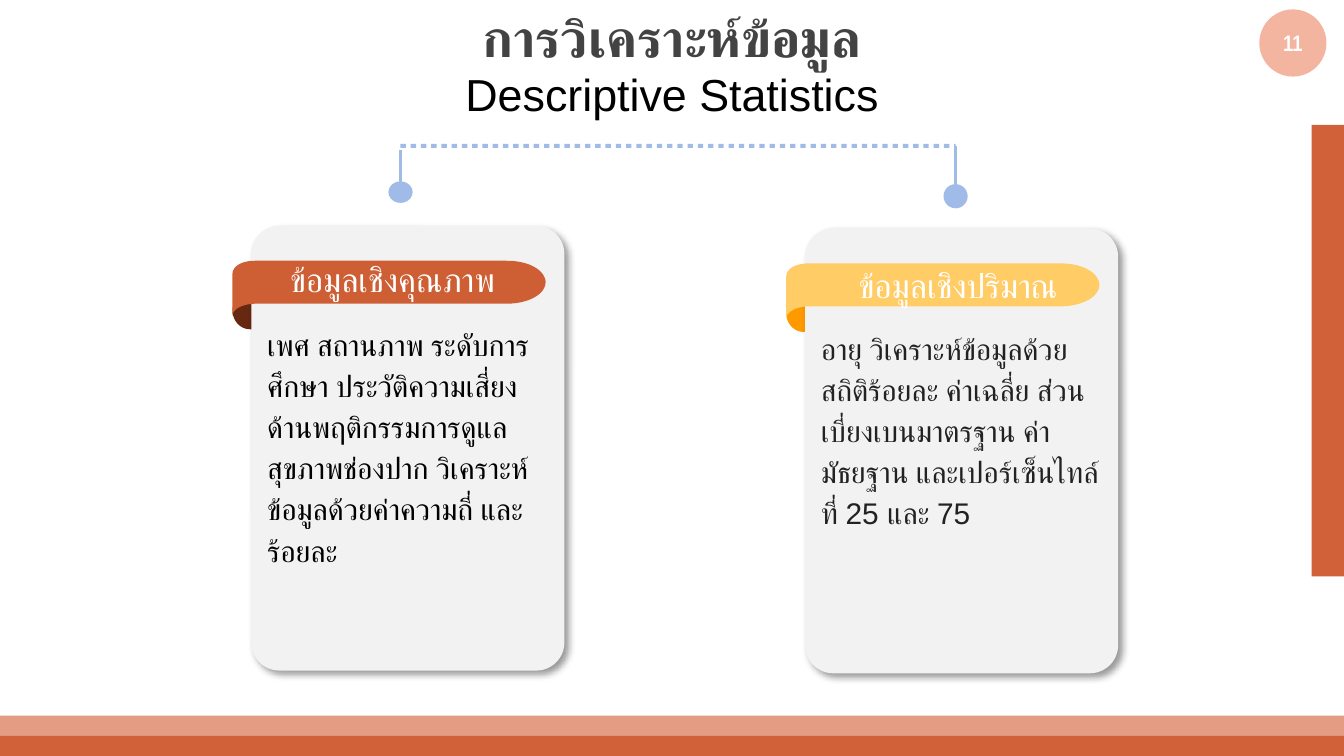
import pptx
import pptx.util
import pptx.dml.color
import pptx.enum.shapes
import pptx.enum.text
import pptx.oxml
import pptx.oxml.ns

Inches, Pt = pptx.util.Inches, pptx.util.Pt
RGB = pptx.dml.color.RGBColor
KIND = pptx.enum.shapes.MSO_SHAPE
LINE = pptx.enum.shapes.MSO_CONNECTOR.STRAIGHT
ALIGN = pptx.enum.text.PP_ALIGN
ANCHOR = pptx.enum.text.MSO_ANCHOR

RUST = RGB(0xD1, 0x61, 0x38)
BRICK = RGB(0xCE, 0x5E, 0x34)
BROWN = RGB(0x67, 0x28, 0x11)
YELLOW = RGB(0xFF, 0xCC, 0x66)
ORANGE = RGB(0xFF, 0x99, 0x00)
PEACH = RGB(0xF3, 0xB5, 0x9F)
BLUE = RGB(0xA1, 0xBB, 0xE8)
PALE = RGB(0xF2, 0xF2, 0xF2)
GREY = RGB(0x43, 0x43, 0x43)
INK = RGB(0x22, 0x22, 0x22)
BLACK = RGB(0, 0, 0)
WHITE = RGB(0xFF, 0xFF, 0xFF)

# Content: boxes are left, top, width, height in inches
TITLE = ("การวิเคราะห์ข้อมูล", (3.35, -0.02, 3.3, 0.63))
SUBTITLE = ("Descriptive Statistics", (2.5, 0.45, 5, 0.5))
PAGE = "11"
CARDS = [
    dict(left=1.73, top=1.68, band=BRICK, fold=BROWN,
         head="ข้อมูลเชิงคุณภาพ", head_box=(2.06, 1.88, 1.96, 0.4),
         body="เพศ สถานภาพ ระดับการศึกษา ประวัติความเสี่ยงด้านพฤติกรรมการดูแล"
              "สุขภาพช่องปาก วิเคราะห์ข้อมูลด้วยค่าความถี่ และร้อยละ",
         body_box=(1.89, 2.34, 2.33, 1.67), font="Cambria", ink=BLACK),
    dict(left=5.85, top=1.7, band=YELLOW, fold=ORANGE,
         head="ข้อมูลเชิงปริมาณ", head_box=(6.29, 1.92, 1.74, 0.4),
         body="อายุ วิเคราะห์ข้อมูลด้วยสถิติร้อยละ ค่าเฉลี่ย ส่วนเบี่ยงเบนมาตรฐาน "
              "ค่ามัธยฐาน และเปอร์เซ็นไทล์ที่ 25 และ 75",
         body_box=(6.01, 2.37, 2.31, 1.32), font="Arial", ink=INK),
]
# Stems: x, top, dot centre, dot height
STEMS = [(2.98, 1.12, 1.43, 0.16), (7.11, 1.09, 1.46, 0.18)]

# Outlines from a card's corner: 2 numbers are a line, 6 are a curve
FOLD = [(0.15, 0.49), (0.13, 0.49), (0.06, 0.49, 0, 0.56, 0, 0.63),
        (0, 0.71, 0.06, 0.77, 0.13, 0.77), (0.15, 0.77)]
BAND = [(2.32, 0.38), (2.29, 0.31, 2.18, 0.26, 2.04, 0.26), (0.17, 0.26),
        (0.07, 0.26, 0, 0.3, 0, 0.36), (0, 0.67),
        (0, 0.62, 0.08, 0.58, 0.17, 0.58), (2.04, 0.58),
        (2.2, 0.58, 2.33, 0.51, 2.33, 0.42), (2.33, 0.41, 2.33, 0.4, 2.32, 0.38)]

# Slide of 16 by 9
WIDE = 10
HIGH = WIDE * 9 / 16
deck = pptx.Presentation()
deck.slide_width, deck.slide_height = Inches(WIDE), Inches(HIGH)
slide = deck.slides.add_slide(deck.slide_layouts[6])
shapes = slide.shapes


def paint(shape, color):
    shape.shadow.inherit = False
    shape.fill.solid()
    shape.fill.fore_color.rgb = color
    shape.line.fill.background()
    return shape


def draw(kind, box, color):
    return paint(shapes.add_shape(kind, *map(Inches, box)), color)


def write(frame, text, size, font, color, bold=None, align=ALIGN.LEFT):
    frame.word_wrap = True
    para = frame.paragraphs[0]
    para.alignment = align
    run = para.add_run()
    run.text = text
    run.font.size, run.font.name, run.font.bold = Pt(size), font, bold
    run.font.color.rgb = color
    return para


def label(text, box, *style, **more):
    frame = shapes.add_textbox(*map(Inches, box)).text_frame
    return frame, write(frame, text, *style, **more)


def trace(steps, count=12):
    """Turn lines and Bezier curves into points."""
    points = [steps[0]]
    for step in steps[1:]:
        if len(step) == 2:
            points.append(step)
            continue
        ends = [points[-1], step[:2], step[2:4], step[4:]]
        for i in range(1, count + 1):
            t = i / count
            mix = ((1 - t) ** 3, 3 * t * (1 - t) ** 2, 3 * t * t * (1 - t), t ** 3)
            points.append(tuple(sum(m * e[k] for m, e in zip(mix, ends)) for k in (0, 1)))
    return points


def outline(steps, left, top, color):
    points = [(Inches(left + x), Inches(top + y)) for x, y in trace(steps)]
    pen = shapes.build_freeform(*points[0])
    pen.add_line_segments(points[1:], close=True)
    paint(pen.convert_to_shape(), color)


def shade(shape):
    glow = pptx.oxml.parse_xml(
        '<a:outerShdw %s blurRad="%d" dist="%d" dir="2700000" algn="tl" rotWithShape="0">'
        '<a:srgbClr val="000000"><a:alpha val="40000"/></a:srgbClr></a:outerShdw>'
        % (pptx.oxml.ns.nsdecls("a"), Pt(4), Pt(3)))
    shape._element.spPr.find(pptx.oxml.ns.qn("a:effectLst")).append(glow)


# Headings and side strip
frame, _ = label(*TITLE, 28, "Arial", GREY, bold=True, align=ALIGN.CENTER)
frame.vertical_anchor = ANCHOR.BOTTOM
frame.margin_top = frame.margin_bottom = Inches(0.1)
draw(KIND.RECTANGLE, (9.76, 0.93, 0.24, 3.36), RUST)
label(*SUBTITLE, 24, "Arial", BLACK, align=ALIGN.CENTER)

# Cards with folded ribbons
for card in CARDS:
    left, top = card["left"], card["top"]
    outline(FOLD, left, top, card["fold"])
    panel = draw(KIND.ROUNDED_RECTANGLE, (left + 0.14, top, 2.33, 3.31), PALE)
    panel.adjustments[0] = 0.09
    shade(panel)
    outline(BAND, left, top, card["band"])
    label(card["head"], card["head_box"], 18, "Arial", WHITE)
    _, para = label(card["body"], card["body_box"], 16, card["font"], card["ink"])
    para.line_spacing, para.space_after = 1.15, Pt(10)

# Dashed bar: one outline of evenly spaced dashes
START, END, COUNT, DASH = 2.98, 7.11, 55, 0.04
STEP = (END - START - 0.01) / (COUNT - 1)
high, low = Inches(1.07), Inches(1.09)
pen = None
for i in range(COUNT):
    x = START + i * STEP
    near, far = Inches(x), Inches(min(x + DASH, END))
    if pen is None:
        pen = shapes.build_freeform(near, high)
    else:
        pen.move_to(near, high)
    pen.add_line_segments([(far, high), (far, low), (near, low)], close=True)
bar = paint(pen.convert_to_shape(), BLUE)
bar.height = Inches(0.03)

# Stems and dots
for x, top, mid, tall in STEMS:
    stem = shapes.add_connector(LINE, *map(Inches, (x, top, x, mid)))
    stem.line.color.rgb, stem.line.width = BLUE, Pt(1.25)
    stem._element.spPr.append(pptx.oxml.parse_xml(
        "<a:effectLst %s/>" % pptx.oxml.ns.nsdecls("a")))
    draw(KIND.OVAL, (x - 0.09, mid - tall / 2, 0.18, tall), BLUE)

# Footer bars, the upper one see-through
THICK = 0.15
draw(KIND.RECTANGLE, (0, HIGH - THICK, WIDE, THICK), RUST)
strip = draw(KIND.RECTANGLE, (0, HIGH - 2 * THICK, WIDE, THICK), RUST)
tint = strip._element.spPr.find(".//" + pptx.oxml.ns.qn("a:srgbClr"))
tint.append(pptx.oxml.parse_xml('<a:alpha %s val="62000"/>' % pptx.oxml.ns.nsdecls("a")))

# Page number
badge = draw(KIND.OVAL, (9.37, 0.07, 0.5, 0.5), PEACH)
badge.text_frame.vertical_anchor = ANCHOR.MIDDLE
write(badge.text_frame, PAGE, 12, "Arial Narrow", WHITE, bold=True, align=ALIGN.CENTER)

deck.save("out.pptx")
